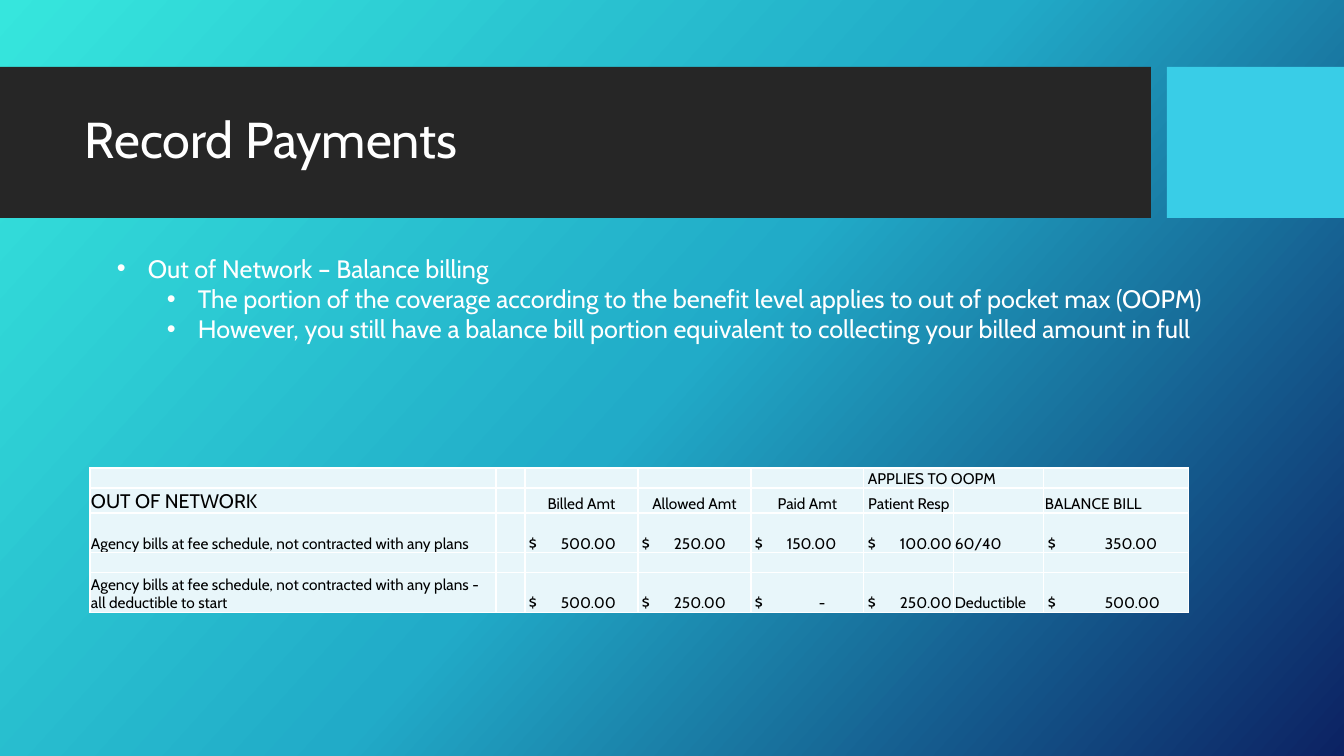
from lxml import etree
from pptx import Presentation
from pptx.dml.color import RGBColor
from pptx.enum.shapes import MSO_SHAPE
from pptx.enum.text import MSO_ANCHOR, PP_ALIGN
from pptx.oxml.ns import qn
from pptx.util import Pt

RECTANGLE = MSO_SHAPE.RECTANGLE
MIDDLE, BOTTOM = MSO_ANCHOR.MIDDLE, MSO_ANCHOR.BOTTOM
LEFT, CENTER = PP_ALIGN.LEFT, PP_ALIGN.CENTER

# Content
FONT = "Cabin"
COLORS = {"band": "262626", "accent": "39CDE7", "white": "FFFFFF",
          "black": "000000", "cell": "E8F6FA"}
GRADIENT = [(0, "36E6DD"), (50, "21ABC8"), (100, "0C2263")]
GRADIENT_ANGLE = 42
BLOCKS = [((0, 67, 1151, 151), "band"), ((1167, 67, 177, 151), "accent")]
TITLE = "Record Payments"
POINTS = [
    (0, "Out of Network – Balance billing"),
    (1, "The portion of the coverage according to the benefit level "
        "applies to out of pocket max (OOPM)"),
    (1, "However, you still have a balance bill portion equivalent to "
        "collecting your billed amount in full"),
]
COLUMNS = [406, 29, 113, 113, 113, 90, 90, 145]
ROWS = [20, 25, 40, 20, 40]
PAYMENTS = [
    ["", "", "", "", "", "APPLIES TO OOPM", "", ""],
    ["OUT OF NETWORK", "", "Billed Amt", "Allowed Amt", "Paid Amt",
     "Patient Resp", "", "BALANCE BILL"],
    ["Agency bills at fee schedule, not contracted with any plans", "",
     "$\t500.00", "$\t250.00", "$\t150.00", "$\t100.00", "60/40", "$\t350.00"],
    [""] * 8,
    ["Agency bills at fee schedule, not contracted with any plans - "
     "all deductible to start", "",
     "$\t500.00", "$\t250.00", "$\t-", "$\t250.00", "Deductible", "$\t500.00"],
]
HEADER_ROW, OOPM_COLUMN, BALANCE_COLUMN = 1, 5, 7
CENTERED_COLUMNS = range(2, 6)
AMOUNT_TAB, BALANCE_TAB, DASH_TAB = 32, 57, 64

SLIDE_WIDTH, SLIDE_HEIGHT = 1344, 756
SCALE = 914400 / 100.8


def px(length):
    return round(length * SCALE)


def color(name):
    return RGBColor.from_string(COLORS[name])


def set_font(paragraph, size, name):
    font = paragraph.font
    font.name, font.size = FONT, Pt(size)
    font.color.rgb = color(name)


def add_text_frame(left, top, width, height):
    frame = slide.shapes.add_textbox(*map(px, (left, top, width, height))).text_frame
    frame.word_wrap = True
    return frame


def add_borders(cell):
    for side in ("lnL", "lnR", "lnT", "lnB"):
        line = etree.SubElement(cell._tc.get_or_add_tcPr(), qn(f"a:{side}"), w=str(Pt(1)))
        fill = etree.SubElement(line, qn("a:solidFill"))
        etree.SubElement(fill, qn("a:srgbClr"), val=COLORS["white"])


prs = Presentation()
prs.slide_width, prs.slide_height = px(SLIDE_WIDTH), px(SLIDE_HEIGHT)
slide = prs.slides.add_slide(prs.slide_layouts[6])

# Background gradient
background = slide.background.fill
background.gradient()
background.gradient_angle = 360 - GRADIENT_ANGLE
stops = slide._element.find(".//" + qn("a:gsLst"))
for stop in list(stops):
    stops.remove(stop)
for percent, shade in GRADIENT:
    stop = etree.SubElement(stops, qn("a:gs"), pos=str(percent * 1000))
    etree.SubElement(stop, qn("a:srgbClr"), val=shade)

# Title band and accent block
for box, name in BLOCKS:
    block = slide.shapes.add_shape(RECTANGLE, *map(px, box))
    block.shadow.inherit = False
    block.fill.solid()
    block.fill.fore_color.rgb = color(name)
    block.line.fill.background()

# Title
title = add_text_frame(75, 83, 1059, 119)
title.vertical_anchor = MIDDLE
heading = title.paragraphs[0]
heading.text = TITLE
heading.line_spacing = 0.9
set_font(heading, 36, "white")

# Bullet points
body = add_text_frame(107, 248, 1109, 194)
for index, (level, text) in enumerate(POINTS):
    point = body.add_paragraph() if index else body.paragraphs[0]
    point.text = text
    point.level = level
    properties = point._p.get_or_add_pPr()
    properties.set("marL", str(px(31 + 50 * level)))
    properties.set("indent", str(px(-31)))
    etree.SubElement(properties, qn("a:buFont"), typeface="Arial")
    etree.SubElement(properties, qn("a:buChar"), char="•")
    set_font(point, 18, "white")

# Payment table
table = slide.shapes.add_table(len(ROWS), len(COLUMNS), px(90), px(468),
                               px(sum(COLUMNS)), px(sum(ROWS))).table
table.first_row = table.horz_banding = False
for column, width in zip(table.columns, COLUMNS):
    column.width = px(width)
for row, height in zip(table.rows, ROWS):
    row.height = px(height)
table.cell(0, OOPM_COLUMN).merge(table.cell(0, OOPM_COLUMN + 1))

for r, values in enumerate(PAYMENTS):
    for c, text in enumerate(values):
        cell = table.cell(r, c)
        is_amount = text.startswith("$")
        indented = is_amount or (r == 0 and c == OOPM_COLUMN)
        cell.margin_left = px(4 if indented else 1)
        cell.margin_top = cell.margin_right = px(1)
        cell.margin_bottom = 0
        cell.vertical_anchor = BOTTOM
        add_borders(cell)
        cell.fill.solid()
        cell.fill.fore_color.rgb = color("cell")

        entry = cell.text_frame.paragraphs[0]
        entry.text = text
        entry.alignment = CENTER if r == HEADER_ROW and c in CENTERED_COLUMNS else LEFT
        if is_amount:
            tab = (DASH_TAB if text.endswith("-")
                   else BALANCE_TAB if c == BALANCE_COLUMN else AMOUNT_TAB)
            tabs = etree.SubElement(entry._p.get_or_add_pPr(), qn("a:tabLst"))
            etree.SubElement(tabs, qn("a:tab"), pos=str(px(tab)), algn="l")
        set_font(entry, 14 if r == HEADER_ROW and c == 0 else 11, "black")
        if not text:
            # Keeps empty rows as low as the text rows
            etree.SubElement(entry._p, qn("a:endParaRPr"), sz="1100")

prs.save("out.pptx")
